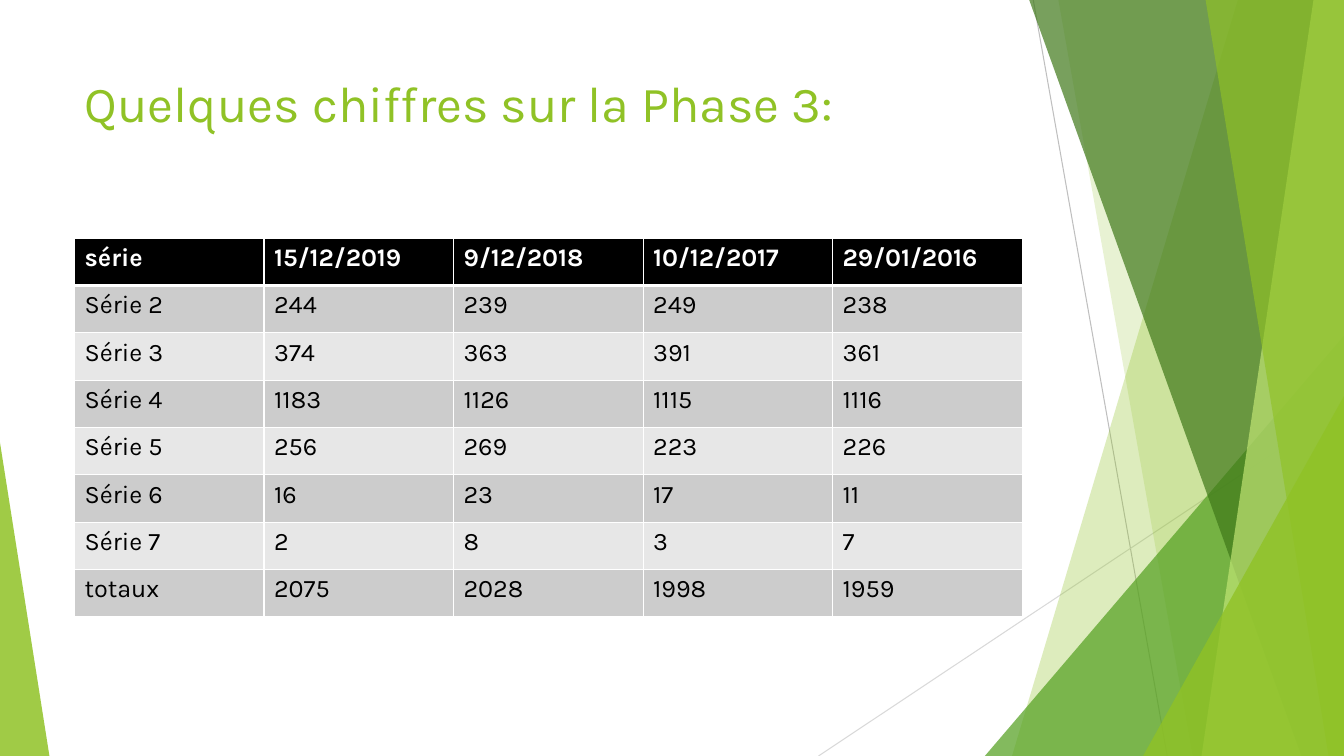
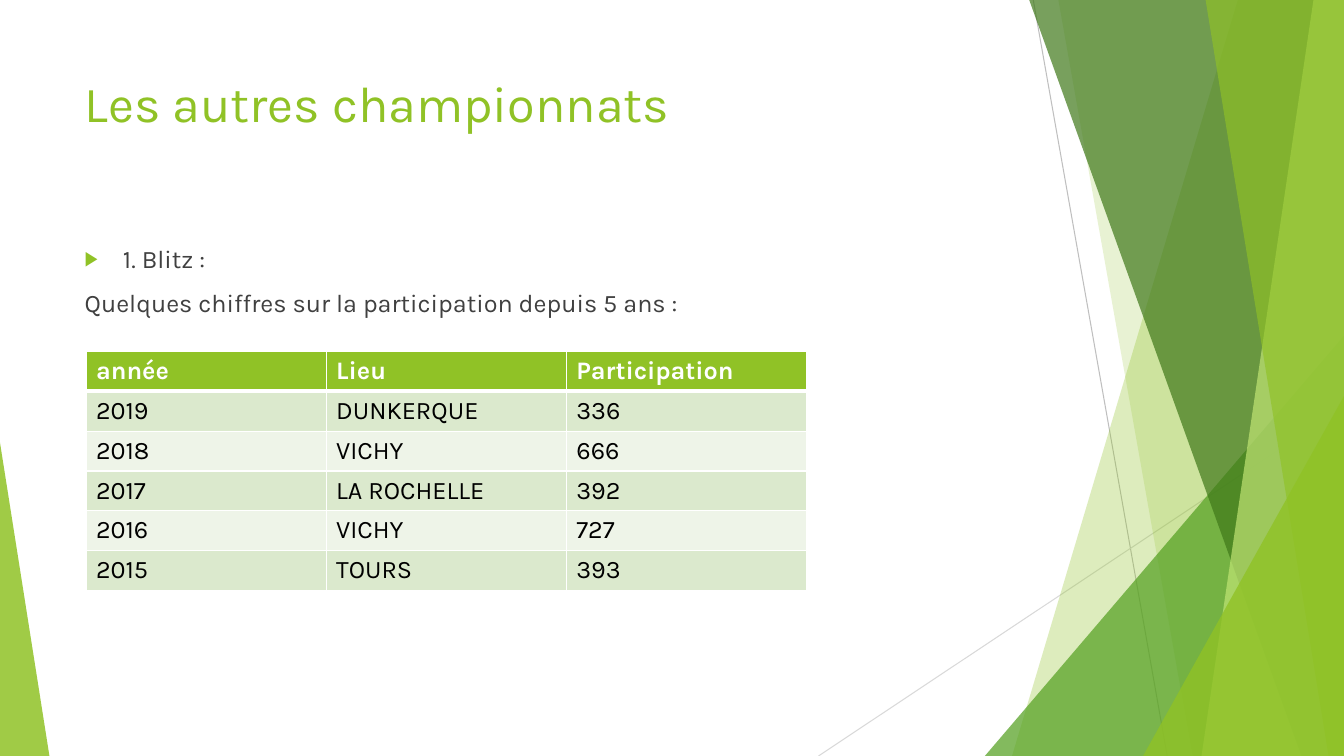
import pptx
import pptx.dml.color
import pptx.enum.shapes
import pptx.enum.text
import pptx.oxml
import pptx.oxml.ns
import pptx.util
from lxml import etree

FONT = "Karla"
GREEN, WHITE, BLACK, GREY = "90C226", "FFFFFF", "000000", "404040"
qn = pptx.oxml.ns.qn

deck = pptx.Presentation()
deck.slide_width = pptx.util.Inches(13.33)
deck.slide_height = pptx.util.Inches(7.5)
# One column and one row are a hundredth of the slide's width and height.
COL = deck.slide_width / 100
ROW = deck.slide_height / 100
LEFT, TEXT_WIDTH = 5.55, 70.5
BODY_TOP = 31.5

# Start x, start y, end x, end y, colour
rays = [
    (76.88, 0, 86.85, 100, "BFBFBF"),
    (100, 53.73, 60.9, 100, "D9D9D9"),
]
# Top x, foot x, top y, colour, opacity in percent
facets = [
    (92.1, 75.3, 0, GREEN, 30),
    (78.75, 88.73, 0, GREEN, 20),
    (100, 73.28, 44.4, "54A021", 72),
    (76.58, 96.83, 0, "3F7819", 70),
    (97.73, 89.4, 0, "C0E474", 70),
    (89.7, 98.85, 0, GREEN, 65),
    (100, 85.05, 52.4, GREEN, 80),
    (0, 3.68, 58.53, GREEN, 85),
]
contents = [
    {
        "title": "Quelques chiffres sur la Phase 3:",
        "lines": [],
        "box": (LEFT, BODY_TOP, TEXT_WIDTH, 50.1),
        "fills": (BLACK, "CCCCCC", "E7E7E7"),
        "rows": [
            ("série", "15/12/2019", "9/12/2018", "10/12/2017", "29/01/2016"),
            ("Série 2", "244", "239", "249", "238"),
            ("Série 3", "374", "363", "391", "361"),
            ("Série 4", "1183", "1126", "1115", "1116"),
            ("Série 5", "256", "269", "223", "226"),
            ("Série 6", "16", "23", "17", "11"),
            ("Série 7", "2", "8", "3", "7"),
            ("totaux", "2075", "2028", "1998", "1959"),
        ],
    },
    {
        "title": "Les autres championnats",
        "lines": ["1. Blitz :", "Quelques chiffres sur la participation depuis 5 ans :"],
        "box": (6.4, 46.5, 53.6, 31.6),
        "fills": (GREEN, "DBE9CD", "EEF4E8"),
        "rows": [
            ("année", "Lieu", "Participation"),
            ("2019", "DUNKERQUE", "336"),
            ("2018", "VICHY", "666"),
            ("2017", "LA ROCHELLE", "392"),
            ("2016", "VICHY", "727"),
            ("2015", "TOURS", "393"),
        ],
    },
]


def paint(fill, colour):
    """Give a shape, line, font or cell fill one solid colour."""
    fill.solid()
    fill.fore_color.rgb = pptx.dml.color.RGBColor.from_string(colour)


def write(para, text, size=18, colour=BLACK, bold=False):
    span = para.add_run()
    span.text = text
    span.font.name = FONT
    span.font.size = pptx.util.Pt(size)
    span.font.bold = bold
    paint(span.font.fill, colour)
    para.alignment = pptx.enum.text.PP_ALIGN.LEFT


for content in contents:
    page = deck.slides.add_slide(deck.slide_layouts[1 if content["lines"] else 5])

    # Backdrop, behind the placeholders
    backdrop = page.shapes.add_group_shape()
    for x1, y1, x2, y2, colour in rays:
        ray = backdrop.shapes.add_connector(
            pptx.enum.shapes.MSO_CONNECTOR.STRAIGHT,
            round(x1 * COL), round(y1 * ROW), round(x2 * COL), round(y2 * ROW))
        ray.line.width = pptx.util.Pt(0.75)
        paint(ray.line.fill, colour)
        etree.SubElement(ray.element.spPr, qn("a:effectLst"))
    for top_x, foot_x, top_y, colour, opacity in facets:
        if top_y:
            facet = backdrop.shapes.add_shape(
                pptx.enum.shapes.MSO_SHAPE.ISOSCELES_TRIANGLE,
                round(min(top_x, foot_x) * COL), round(top_y * ROW),
                round(abs(top_x - foot_x) * COL), round((100 - top_y) * ROW))
            facet.adjustments[0] = 1 if top_x > foot_x else 0
        else:
            outline = backdrop.shapes.build_freeform(round(top_x * COL), 0)
            outline.add_line_segments([
                (deck.slide_width, 0), (deck.slide_width, deck.slide_height),
                (round(foot_x * COL), deck.slide_height)])
            facet = outline.convert_to_shape()
        facet.shadow.inherit = False
        facet.line.fill.background()
        paint(facet.fill, colour)
        tint = next(facet.element.iter(qn("a:srgbClr")))
        etree.SubElement(tint, qn("a:alpha"), val=str(opacity * 1000))
    page.shapes.element.insert(2, backdrop.element)

    # Title and list
    for box in page.placeholders:
        is_title = box.placeholder_format.idx == 0
        box.left, box.width = round(LEFT * COL), round(TEXT_WIDTH * COL)
        box.top = round((8.9 if is_title else BODY_TOP) * ROW)
        box.height = round((19.2 if is_title else 56.5) * ROW)
        frame = box.text_frame
        frame.word_wrap = True
        frame.auto_size = pptx.enum.text.MSO_AUTO_SIZE.NONE
        frame.vertical_anchor = pptx.enum.text.MSO_ANCHOR.TOP
        if is_title:
            write(frame.paragraphs[0], content["title"], size=36, colour=GREEN)
            continue
        for number, line in enumerate(content["lines"]):
            para = frame.add_paragraph() if number else frame.paragraphs[0]
            write(para, line, colour=GREY)
            para.space_before = pptx.util.Pt(10)
            props = para._p.get_or_add_pPr()
            indent = 0 if number else pptx.util.Inches(0.38)
            props.set("marL", str(indent))
            props.set("indent", str(-indent))
            if number:
                etree.SubElement(props, qn("a:buNone"))
            else:
                bullet_colour = etree.SubElement(props, qn("a:buClr"))
                etree.SubElement(bullet_colour, qn("a:srgbClr"), val=GREEN)
                etree.SubElement(props, qn("a:buSzPct"), val="80000")
                etree.SubElement(props, qn("a:buChar"), char="▶")

    # Table
    rows = content["rows"]
    left, top, width, height = content["box"]
    table = page.shapes.add_table(
        len(rows), len(rows[0]), round(left * COL), round(top * ROW),
        round(width * COL), round(height * ROW)).table
    table.horz_banding = False
    header_fill, odd_fill, even_fill = content["fills"]
    for r, row in enumerate(rows):
        for c, text in enumerate(row):
            cell = table.cell(r, c)
            write(cell.text_frame.paragraphs[0], text,
                  colour=BLACK if r else WHITE, bold=r == 0)
            props = cell._tc.get_or_add_tcPr()
            for side in "LRTB":
                under_header = (r, side) in [(0, "B"), (1, "T")]
                edge = etree.SubElement(props, qn(f"a:ln{side}"),
                                        w=str(pptx.util.Pt(3 if under_header else 1)))
                edge_fill = etree.SubElement(edge, qn("a:solidFill"))
                etree.SubElement(edge_fill, qn("a:srgbClr"), val=WHITE)
            cell.fill.solid()
            paint(cell.fill, header_fill if r == 0 else odd_fill if r % 2 else even_fill)

deck.save("out.pptx")
